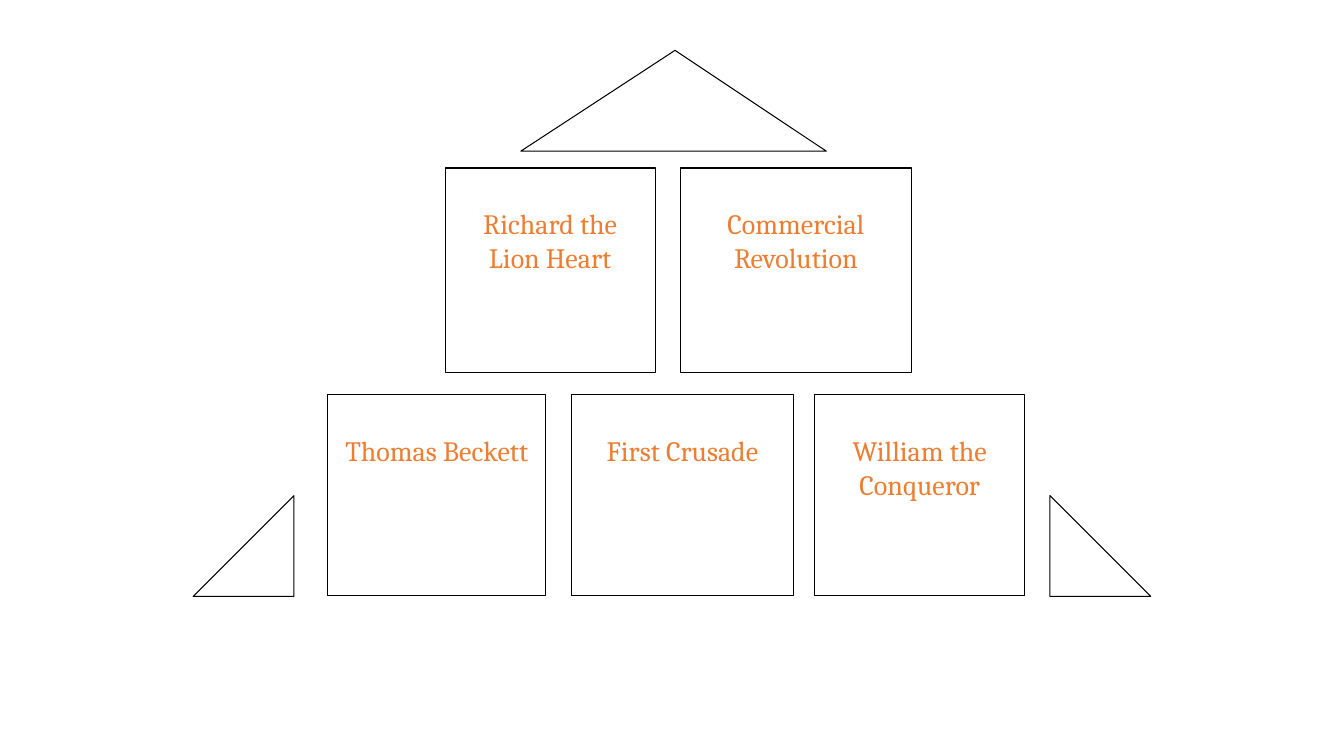
from dataclasses import dataclass

from pptx import Presentation
from pptx.dml.color import RGBColor
from pptx.enum.shapes import MSO_SHAPE
from pptx.enum.text import MSO_ANCHOR, PP_ALIGN
from pptx.util import Pt

RECTANGLE = MSO_SHAPE.RECTANGLE
TRIANGLE = MSO_SHAPE.ISOSCELES_TRIANGLE
RIGHT_TRIANGLE = MSO_SHAPE.RIGHT_TRIANGLE
TOP = MSO_ANCHOR.TOP
CENTER = PP_ALIGN.CENTER

EMU_PER_PX = 9525  # 96 px to the inch


def px(length):
    return length * EMU_PER_PX


@dataclass(frozen=True)
class Theme:
    paper: RGBColor = RGBColor(0xFF, 0xFF, 0xFF)
    outline: RGBColor = RGBColor(0x00, 0x00, 0x00)
    topic: RGBColor = RGBColor(0xED, 0x7D, 0x31)
    font: str = "Cambria"
    topic_size: Pt = Pt(20)
    outline_width: Pt = Pt(0.75)


class PyramidSlide:
    def __init__(self, slide, theme):
        self.slide = slide
        self.theme = theme

    def outlined(self, kind, left, top, width, height):
        shape = self.slide.shapes.add_shape(
            kind, px(left), px(top), px(width), px(height))
        shape.shadow.inherit = False
        shape.fill.solid()
        shape.fill.fore_color.rgb = self.theme.paper
        shape.line.color.rgb = self.theme.outline
        shape.line.width = self.theme.outline_width
        return shape

    def block(self, topic, left, top, width, height):
        frame = self.outlined(RECTANGLE, left, top, width, height).text_frame
        frame.word_wrap = True
        frame.vertical_anchor = TOP
        frame.margin_top = px(37)
        label = frame.paragraphs[0]
        label.text = topic
        label.alignment = CENTER
        label.font.name = self.theme.font
        label.font.size = self.theme.topic_size
        label.font.color.rgb = self.theme.topic

    def row(self, top, height, blocks):
        for topic, left, width in blocks:
            self.block(topic, left, top, width, height)

    def peak(self, left, top, width, height):
        self.outlined(TRIANGLE, left, top, width, height).adjustments[0] = 0.505

    def corner(self, left, top, side, rotation=0):
        self.outlined(RIGHT_TRIANGLE, left, top, side, side).rotation = rotation


def main():
    prs = Presentation()
    prs.slide_width, prs.slide_height = px(1280), px(720)
    pyramid = PyramidSlide(prs.slides.add_slide(prs.slide_layouts[6]), Theme())

    # Upper and lower rows: topic, left, width
    pyramid.row(160, 195, [
        ("Richard the Lion Heart", 424, 200),
        ("Commercial Revolution", 648, 220),
    ])
    pyramid.row(376, 191, [
        ("Thomas Beckett", 312, 208),
        ("First Crusade", 544, 212),
        ("William the Conqueror", 776, 200),
    ])

    # Peak and the two base corners
    pyramid.peak(496, 48, 291, 96)
    pyramid.corner(184, 472, 96, rotation=270)
    pyramid.corner(1000, 472, 96)

    prs.save("out.pptx")


if __name__ == "__main__":
    main()
